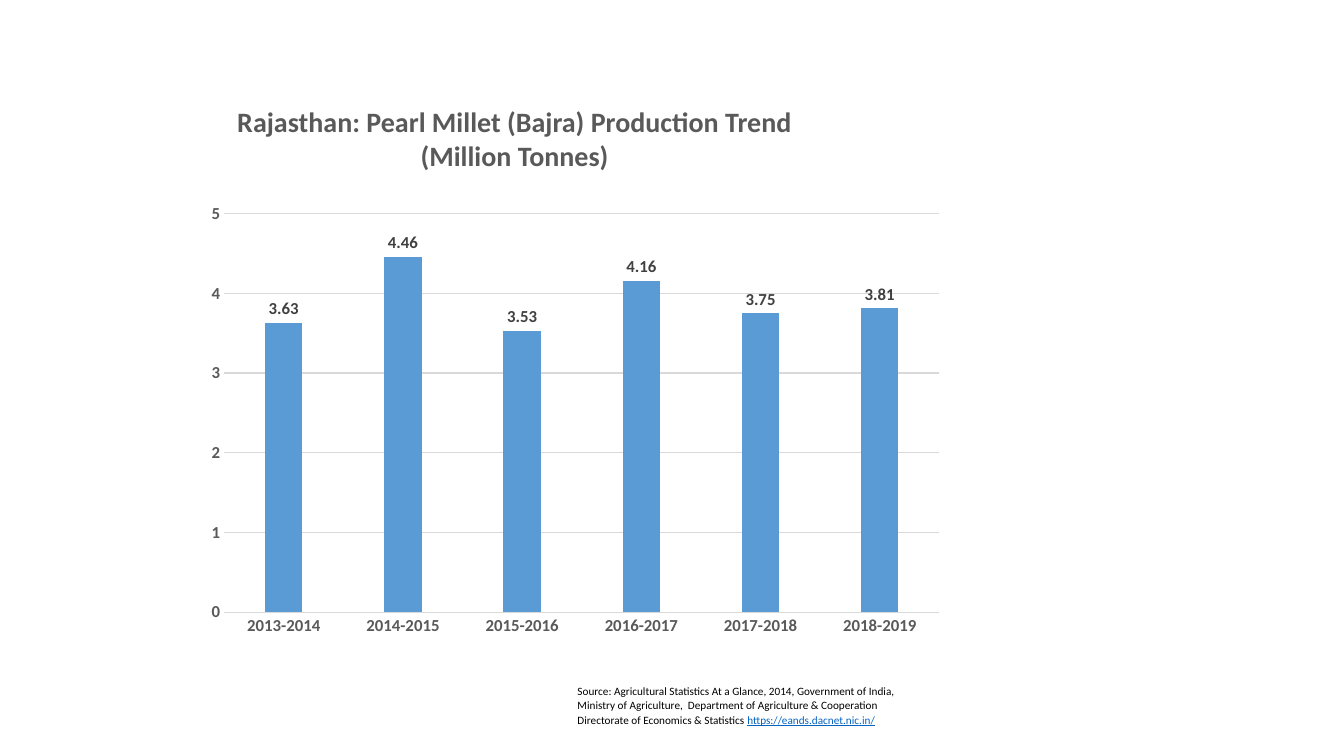
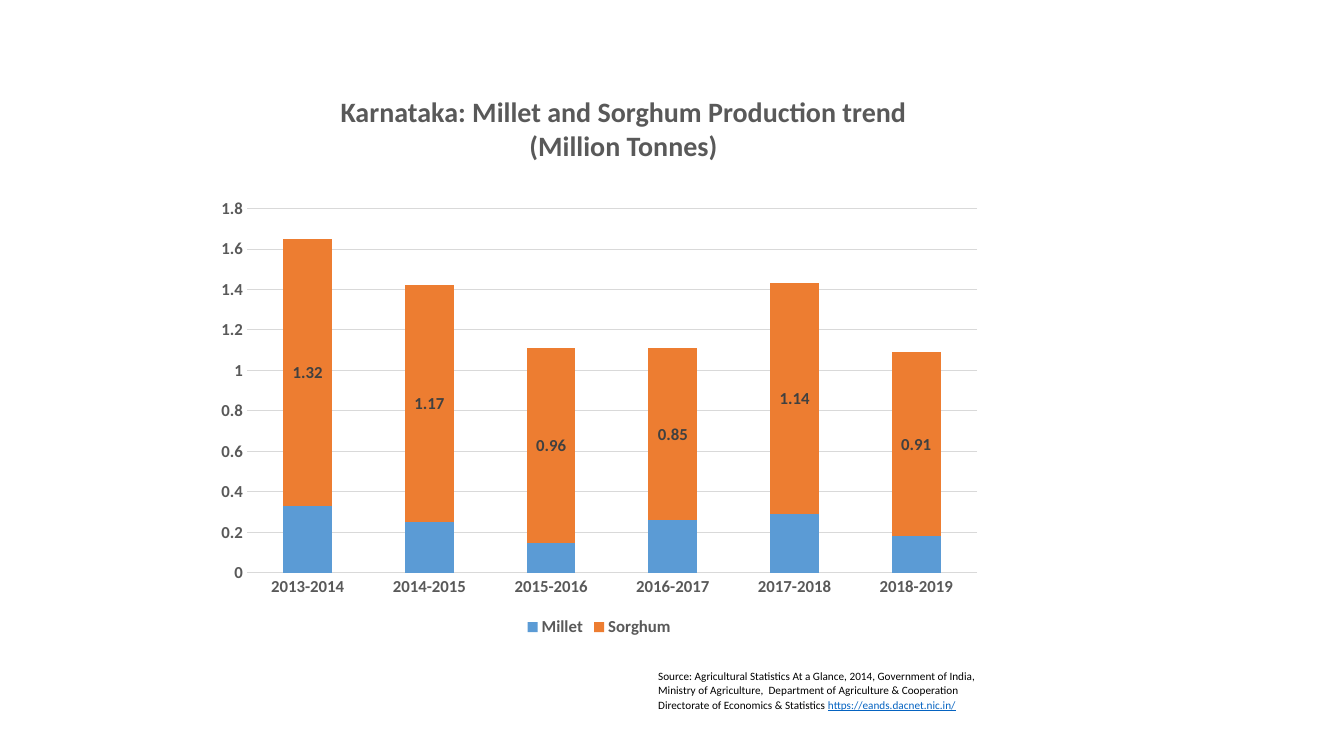
from pptx import Presentation
from pptx.chart.data import CategoryChartData
from pptx.dml.color import RGBColor
from pptx.enum.chart import XL_CHART_TYPE as ChartType
from pptx.enum.chart import XL_LABEL_POSITION as LabelPosition
from pptx.enum.chart import XL_LEGEND_POSITION as LegendPosition
from pptx.enum.chart import XL_TICK_MARK as TickMark
from pptx.enum.text import MSO_AUTO_SIZE as AutoSize
from pptx.enum.text import PP_ALIGN as Align
from pptx.util import Pt

# Shared style
FONT = "Calibri"
BLACK = RGBColor(0x00, 0x00, 0x00)
GREY = RGBColor(0x59, 0x59, 0x59)
LABEL_GREY = RGBColor(0x40, 0x40, 0x40)
GRID_GREY = RGBColor(0xD9, 0xD9, 0xD9)
BLUE = RGBColor(0x5B, 0x9B, 0xD5)
ORANGE = RGBColor(0xED, 0x7D, 0x31)
LINK_BLUE = RGBColor(0x05, 0x63, 0xC1)

# Shared content
UNIT = "(Million Tonnes)"
YEARS = [f"{year}-{year + 1}" for year in range(2013, 2019)]
SOURCE = ("Source: Agricultural Statistics At a Glance, 2014, Government of India, "
          "Ministry of Agriculture,  Department of Agriculture & Cooperation")
OFFICE = "Directorate of Economics & Statistics "
ADDRESS = "https://eands.dacnet.nic.in/"


class ProductionDeck:
    def __init__(self):
        self.deck = Presentation()
        self.deck.slide_width, self.deck.slide_height = Pt(960), Pt(540)
        self.page = None

    def new_page(self):
        self.page = self.deck.slides.add_slide(self.deck.slide_layouts[6])

    def style(self, font, size, color, bold=False):
        font.name, font.size, font.bold = FONT, Pt(size), bold
        font.color.rgb = color

    def text_box(self, left, top, width, height):
        box = self.page.shapes.add_textbox(Pt(left), Pt(top), Pt(width), Pt(height))
        frame = box.text_frame
        frame.word_wrap = True
        frame.auto_size = AutoSize.SHAPE_TO_FIT_TEXT
        return frame

    def title(self, left, top, heading):
        frame = self.text_box(left, top, 431.3, 55.4)
        frame.text = f"{heading}\n{UNIT}"
        for para in frame.paragraphs:
            para.alignment = Align.CENTER
            self.style(para.runs[0].font, 20, GREY, True)

    def source_note(self, left, top):
        frame = self.text_box(left, top, 258.5, 38.2)
        frame.text = f"{SOURCE}\n{OFFICE}"
        address = frame.paragraphs[1].add_run()
        address.text = ADDRESS
        for para in frame.paragraphs:
            para.line_spacing = 1.07
            for span in para.runs:
                self.style(span.font, 8, BLACK)
        frame.paragraphs[1].space_after = Pt(8)
        address.font.color.rgb = LINK_BLUE
        address.font.underline = True

    def column_chart(self, kind, left, top, width, height, series, gap, overlap,
                     maximum, step, label_position, legend=False):
        """Each series is (name, values, colour); the last one carries labels."""
        data = CategoryChartData()
        data.categories = YEARS
        for name, values, _ in series:
            data.add_series(name, values)
        chart = self.page.shapes.add_chart(
            kind, Pt(left), Pt(top), Pt(width), Pt(height), data).chart
        self.style(chart.font, 12, BLACK, True)
        chart.has_title = False
        chart.has_legend = legend
        if legend:
            chart.legend.position = LegendPosition.BOTTOM
            chart.legend.include_in_layout = False
            self.style(chart.legend.font, 12, GREY, True)

        # Axes and gridlines
        years, tonnes = chart.category_axis, chart.value_axis
        for axis in (years, tonnes):
            axis.major_tick_mark = axis.minor_tick_mark = TickMark.NONE
            self.style(axis.tick_labels.font, 12, GREY, True)
        tonnes.minimum_scale, tonnes.maximum_scale = 0, maximum
        tonnes.major_unit = step
        tonnes.format.line.fill.background()
        for line in (years.format.line, tonnes.major_gridlines.format.line):
            line.color.rgb = GRID_GREY
            line.width = Pt(0.75)

        # Columns and value labels
        plot = chart.plots[0]
        plot.gap_width, plot.overlap = gap, overlap
        plot.vary_by_categories = False
        for columns, (_, _, color) in zip(plot.series, series):
            columns.invert_if_negative = False
            columns.format.fill.solid()
            columns.format.fill.fore_color.rgb = color
        labels = plot.series[len(series) - 1].data_labels
        labels.show_value = True
        labels.position = label_position
        self.style(labels.font, 12, LABEL_GREY, True)

    def save(self):
        self.deck.save("out.pptx")


def main():
    show = ProductionDeck()

    # Rajasthan
    show.new_page()
    show.column_chart(
        ChartType.COLUMN_CLUSTERED, 140.4, 139, 541.4, 321.8,
        [("Series 1", [3.63, 4.46, 3.53, 4.16, 3.75, 3.81], BLUE)],
        gap=219, overlap=-27, maximum=5, step=1,
        label_position=LabelPosition.OUTSIDE_END)
    show.title(151.9, 71.3, "Rajasthan: Pearl Millet (Bajra) Production Trend")
    show.source_note(405.4, 484.6)

    # Karnataka
    show.new_page()
    show.title(229.7, 64.1, "Karnataka: Millet and Sorghum Production trend")
    show.column_chart(
        ChartType.COLUMN_STACKED, 146.9, 135.4, 562.3, 322.6,
        [("Millet", [0.33, 0.25, 0.15, 0.26, 0.29, 0.18], BLUE),
         ("Sorghum", [1.32, 1.17, 0.96, 0.85, 1.14, 0.91], ORANGE)],
        gap=150, overlap=100, maximum=1.8, step=0.2,
        label_position=LabelPosition.CENTER, legend=True)
    show.source_note(463, 473.8)

    show.save()


if __name__ == "__main__":
    main()
